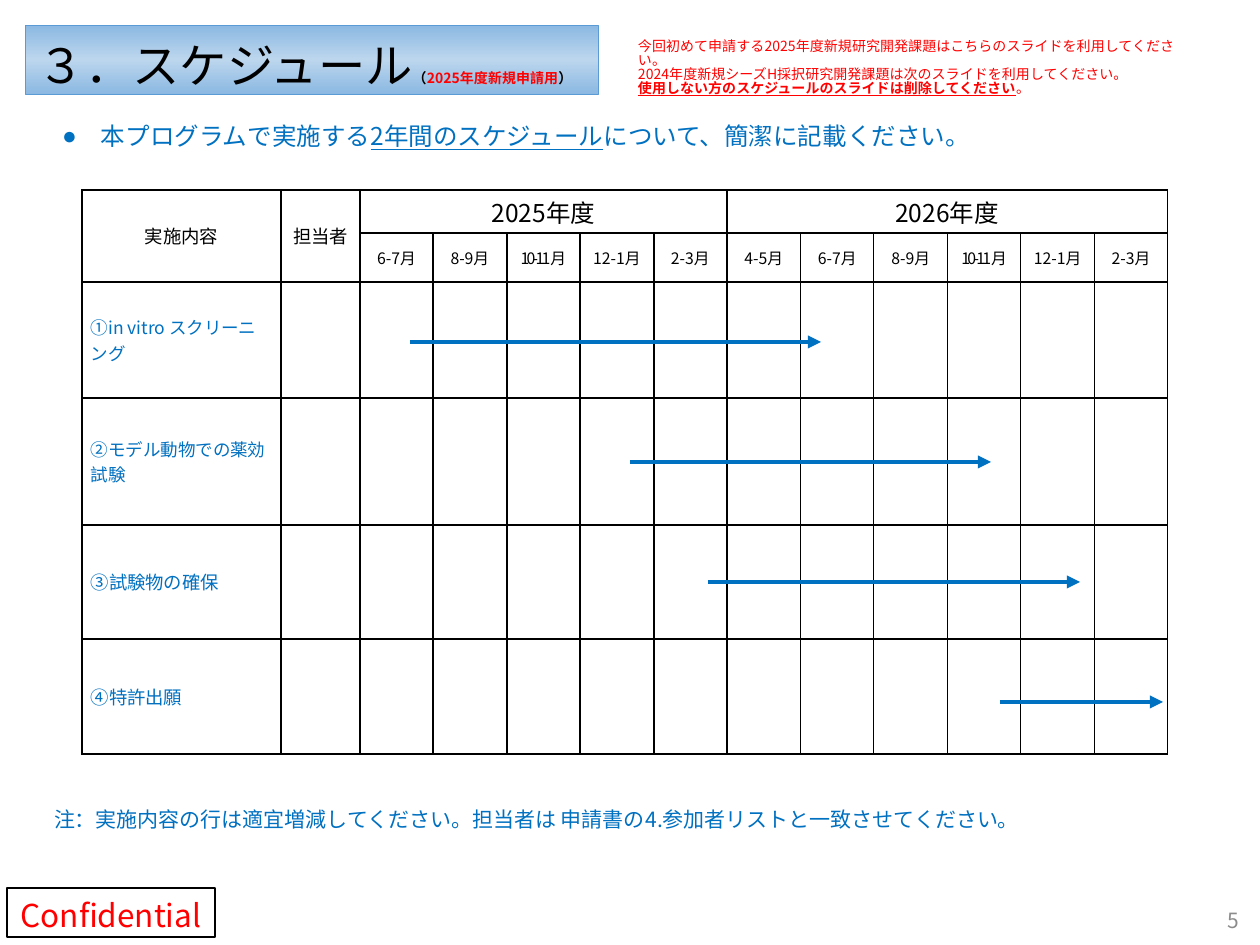
import pptx
import pptx.util
import pptx.oxml
import pptx.oxml.ns
import pptx.dml.color
import pptx.enum.text
import pptx.enum.shapes

RGB = pptx.dml.color.RGBColor
BLUE = RGB(0x00, 0x70, 0xC0)
RED = RGB(0xFF, 0x00, 0x00)
BLACK = RGB(0x00, 0x00, 0x00)
GREY = RGB(0x8C, 0x8C, 0x8C)
EDGE = RGB(0x5B, 0x9B, 0xD5)
DEEP = RGB(0x8B, 0xB8, 0xE1)
PALE = RGB(0xBC, 0xD6, 0xEE)
FONT = "Noto Sans CJK JP"
NS = pptx.oxml.ns.nsdecls("a")
ALIGN = pptx.enum.text.PP_ALIGN
MIDDLE = pptx.enum.text.MSO_ANCHOR.MIDDLE
SCALE = 914400 / 126


def px(num):
    """Turn px into EMU."""
    return pptx.util.Emu(round(num * SCALE))


def node(xml):
    """Parse one drawing element, given without its namespace."""
    return pptx.oxml.parse_xml(xml.replace(" ", f" {NS} ", 1))


def style(par, size, color, align=ALIGN.LEFT):
    """Format every run of a paragraph."""
    par.alignment = align
    par.space_before = pptx.util.Pt(0)
    for run in par.runs:
        run.font.size = pptx.util.Pt(size)
        run.font.color.rgb = color
        run.font.name = FONT
        run.font._element.append(node(f'<a:ea typeface="{FONT}"/>'))


def add_run(par, text):
    """Append a run and return it."""
    run = par.add_run()
    run.text = text
    return run


def place(shape, box):
    """Move a shape to a box."""
    shape.left, shape.top, shape.width, shape.height = map(px, box)


def set_frame(frame, wrap=True, top=6, low=6):
    """Set wrap, insets and fit of a text frame."""
    frame.word_wrap = wrap
    frame.auto_size = pptx.enum.text.MSO_AUTO_SIZE.NONE
    frame.margin_left = frame.margin_right = px(13)
    frame.margin_top, frame.margin_bottom = px(top), px(low)


def add_text(slide, box, lines, size, color, align=ALIGN.LEFT):
    """Add a text box and return its frame."""
    frame = slide.shapes.add_textbox(*map(px, box)).text_frame
    set_frame(frame)
    frame.text = "\n".join(lines)
    for par in frame.paragraphs:
        style(par, size, color, align)
    return frame


def add_title(slide, box):
    """Build the title bar."""
    shape = slide.shapes.title
    place(shape, box)
    shape.fill.gradient()
    shape.fill.gradient_angle = 90
    stops = shape._element.spPr.find(".//" + pptx.oxml.ns.qn("a:gsLst"))
    stops.clear()
    for pos, color in ((0, DEEP), (50, PALE), (100, DEEP)):
        stops.append(node(f'<a:gs pos="{pos * 1000}">'
                          f'<a:srgbClr val="{color}"/></a:gs>'))
    shape.line.color.rgb = EDGE
    shape.line.width = pptx.util.Pt(0.5)
    frame = shape.text_frame
    set_frame(frame, False, 15, 5)
    frame.vertical_anchor = MIDDLE
    frame.text = "３．スケジュール"
    par = frame.paragraphs[0]
    small = [add_run(par, text) for text in ("（", "2025年度新規申請用", "）")]
    style(par, 27, BLACK)
    for run in small:
        run.font.size = pptx.util.Pt(8)
        run.font.bold = True
    small[1].font.color.rgb = RED


def add_lead(slide, box):
    """Build the bulleted lead line."""
    body = slide.placeholders[1]
    place(body, box)
    set_frame(body.text_frame)
    body.text_frame.text = "本プログラムで実施する"
    par = body.text_frame.paragraphs[0]
    add_run(par, "2年間のスケジュール").font.underline = True
    add_run(par, "について、簡潔に記載ください。")
    style(par, 14, BLUE)
    props = par._p.get_or_add_pPr()
    props.set("marL", str(px(39)))
    props.set("indent", str(-px(39)))
    props.append(node('<a:buChar char="●"/>'))


def add_note(slide, box):
    """Build the red usage note."""
    frame = add_text(slide, box, [
        "今回初めて申請する2025年度新規研究開発課題はこちらのスライドを利用してください。",
        "2024年度新規シーズH採択研究開発課題は次のスライドを利用してください。",
        "使用しない方のスケジュールのスライドは削除してください"], 8, RED)
    last = frame.paragraphs[-1]
    last.runs[0].font.bold = last.runs[0].font.underline = True
    add_run(last, "。")
    style(last, 8, RED)
    for par in frame.paragraphs:
        par.line_spacing = 0.84


def set_cell(cell):
    """Clear the fill of a cell and rule its four sides."""
    cell.fill.background()
    cell.vertical_anchor = MIDDLE
    cell.margin_left = cell.margin_right = px(9)
    cell.margin_top = cell.margin_bottom = 0
    props = cell._tc.get_or_add_tcPr()
    for spot, side in enumerate("LRTB"):
        props.insert(spot, node(
            f'<a:ln{side} w="12700"><a:solidFill><a:srgbClr val="{BLACK}"/>'
            f'</a:solidFill></a:ln{side}>'))


def add_plan(slide, box):
    """Build the schedule table and its arrows."""
    left, top, width, height = box
    rows = [43, 49, 116, 127, 114, 115]
    start, count = 278, 11
    edges = [0, 199] + [start + round((width - start) * i / count)
                        for i in range(count + 1)]
    table = slide.shapes.add_table(
        len(rows), count + 2, *map(px, box)).table
    table.first_row = table.horz_banding = False
    for col, (low, high) in zip(table.columns, zip(edges, edges[1:])):
        col.width = px(high - low)
    for row, size in zip(table.rows, rows):
        row.height = px(size)
    for cell in table.iter_cells():
        set_cell(cell)

    def fill(row, col, text, size, color=BLACK, align=ALIGN.CENTER):
        """Write one cell and return its paragraph."""
        cell = table.cell(row, col)
        cell.text = text
        style(cell.text_frame.paragraphs[0], size, color, align)
        return cell.text_frame.paragraphs[0]

    heads = [("実施内容", 10.5, 0, 1, 0), ("担当者", 10.5, 1, 1, 1),
             ("2025年度", 14, 2, 0, 6), ("2026年度", 14, 7, 0, 12)]
    for text, size, col, row, end in heads:
        table.cell(0, col).merge(table.cell(row, end))
        fill(0, col, text, size)
    months = ["6-7月", "8-9月", "10-11月", "12-1月", "2-3月"]
    for col, text in enumerate(months + ["4-5月"] + months, 2):
        par = fill(1, col, text, 9)
        if text == "10-11月":
            par.runs[0].font._element.set("spc", "-150")
    tasks = [("①in vitro スクリーニング", 10, 328, 739),
             ("②モデル動物での薬効試験", 10, 548, 909),
             ("③試験物の確保", 10.5, 626, 998),
             ("④特許出願", 10.5, 918, 1081)]
    for i, (text, size, begin, end) in enumerate(tasks):
        fill(i + 2, 0, text, size, BLUE, ALIGN.LEFT)
        add_arrow(slide, left + begin, left + end, top + 152 + 120 * i)


def add_arrow(slide, begin, end, y):
    """Draw one level arrow."""
    line = slide.shapes.add_connector(
        pptx.enum.shapes.MSO_CONNECTOR.STRAIGHT,
        px(begin), px(y), px(end), px(y))
    line.line.color.rgb = BLUE
    line.line.width = pptx.util.Pt(2.5)
    line.line._get_or_add_ln().append(node('<a:tailEnd type="triangle"/>'))
    line._element.spPr.append(node("<a:effectLst />"))


def add_stamp(slide, box):
    """Build the framed secrecy mark."""
    shape = slide.shapes.add_shape(
        pptx.enum.shapes.MSO_SHAPE.RECTANGLE, *map(px, box))
    shape.shadow.inherit = False
    shape.fill.background()
    shape.line.color.rgb = BLACK
    shape.line.width = pptx.util.Pt(0.75)
    set_frame(shape.text_frame, False, 10, 5)
    shape.text_frame.vertical_anchor = MIDDLE
    shape.text_frame.text = "Confidential"
    style(shape.text_frame.paragraphs[0], 18, RED, ALIGN.CENTER)


def main():
    """Build and save the slide."""
    deck = pptx.Presentation()
    deck.slide_width, deck.slide_height = px(1260), px(945)
    slide = deck.slides.add_slide(deck.slide_layouts[1])
    add_stamp(slide, (7, 888, 208, 49))
    add_lead(slide, (49, 115, 1188, 43))
    add_plan(slide, (82, 190, 1086, 564))
    add_text(slide, (41, 801, 1177, 38), [
        "注：実施内容の行は適宜増減してください。担当者は 申請書の4.参加者リストと一致させてください。"],
        12, BLUE)
    page = add_text(slide, (1193, 903, 59, 35), ["5"], 12, GREY, ALIGN.RIGHT)
    page.vertical_anchor = MIDDLE
    add_note(slide, (625, 34, 573, 63))
    add_title(slide, (25, 25, 573, 69))
    deck.save("out.pptx")


if __name__ == "__main__":
    main()
